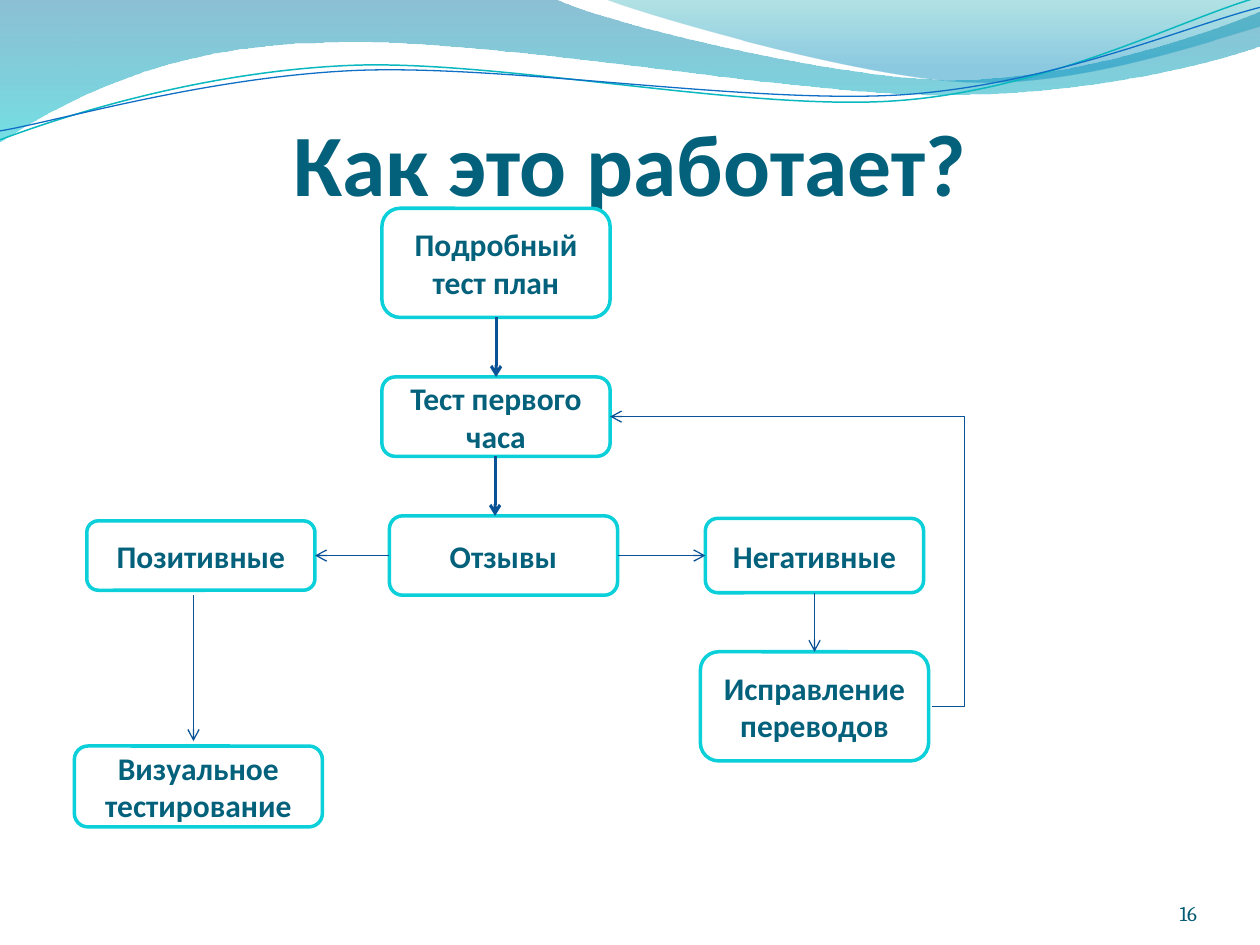
from lxml import etree
from pptx import Presentation
from pptx import util as u
from pptx.dml.color import RGBColor
from pptx.enum import shapes, text
from pptx.oxml.ns import qn

COLORS = {
    "paper": "FFFFFF", "title": "04617B", "number": "045C75",
    "frame": "0BD0D9", "arrow": "095295",
    "teal_line": "0AB8BF", "blue_line": "0F6FC6",
    "wave_top": "0074A1", "wave_bottom": "00C6CF",
    "crest_top": "00A1A9", "crest_bottom": "008BBF",
}

# Outlines in cm: a pair is a straight step, six numbers are a Bezier step.
WAVES = [
    {"start": (0, -0.03), "stops": [("wave_top", 0, 45), ("wave_bottom", 1, 55)],
     "steps": [(11.18, -0.03), (12.09, 0.43, 16.87, 1.6, 19.25, 1.6),
               (21.67, 1.6, 24.33, 0.66, 25.4, 0.23), (25.43, 0.91),
               (24.97, 1.12, 22.1, 1.93, 18.95, 1.91),
               (15.8, 1.91, 9.7, 0.71, 6.53, 0.86),
               (3.28, 0.89, 1.17, 2.11, -0.03, 2.87), (0, -0.03)]},
    {"start": (12.17, -0.03), "stops": [("crest_top", 0, 30), ("crest_bottom", 0.8, 45)],
     "steps": [(12.93, 0.28, 17.32, 1.57, 19.53, 1.65),
               (21.74, 1.75, 24.41, 0.81, 25.4, 0.53), (25.4, 0), (12.17, -0.03)]},
    {"start": (0, 2.82), "line": ("teal_line", 0.85),
     "steps": [(1.22, 2.36, 4.01, 1.45, 7.04, 1.32),
               (10.03, 1.19, 15.06, 2.26, 18.11, 2.03),
               (21.16, 1.8, 23.83, 0.38, 25.35, -0.05)]},
    {"start": (0, 2.64), "line": ("blue_line", 0.75),
     "steps": [(1.19, 2.44, 4.17, 1.55, 7.19, 1.42),
               (10.24, 1.3, 15.16, 2.11, 18.21, 1.91),
               (21.23, 1.7, 23.9, 0.53, 25.4, 0.15)]},
]

# Left, top, width, height in cm from the corner of the chart
STEPS = [
    ("Подробный тест план", 6.2, 0, 4.6, 2.2),
    ("Отзывы", 6.35, 6.2, 4.6, 1.6),
    ("Визуальное тестирование", 0, 10.84, 5, 1.63),
    ("Исправление переводов", 12.62, 8.94, 4.6, 2.2),
    ("Позитивные", 0.25, 6.3, 4.6, 1.4),
    ("Негативные", 12.72, 6.25, 4.4, 1.5),
    ("Тест первого часа", 6.2, 3.4, 4.6, 1.6),
]
# Begin x, y, end x, y in cm, then line width in points
ARROWS = [
    (8.5, 2.2, 8.5, 3.4, 1.75),
    (8.48, 5, 8.48, 6.2, 1.75),
    (6.35, 7, 4.85, 7, 0.75),
    (10.95, 7, 12.72, 7, 0.75),
    (14.92, 7.75, 14.92, 8.94, 0.75),
    (2.4, 7.8, 2.4, 10.74, 0.75),
]
RETURN_ARROW = (17.3, 10.04, 10.8, 4.2, 0.75)


def color(name):
    return RGBColor.from_string(COLORS[name])


def set_line(line, name, width):
    line.color.rgb = color(name)
    line.width = u.Pt(width)


def write(box, words, name, size, font="Calibri", bold=True,
          align=text.PP_ALIGN.CENTER, **frame_format):
    frame = box.text_frame
    for key, value in {"word_wrap": True, **frame_format}.items():
        setattr(frame, key, value)
    para = frame.paragraphs[0]
    para.alignment = align
    span = para.add_run()
    span.text = words
    for key, value in {"name": font, "size": u.Pt(size), "bold": bold}.items():
        setattr(span.font, key, value)
    span.font.color.rgb = color(name)


def fill_gradient(fill, stops):
    fill.gradient()
    fill.gradient_angle = 270
    for stop, (name, position, opacity) in zip(fill.gradient_stops, stops):
        stop.color.rgb = color(name)
        stop.position = position
        tint = stop._gs.find(qn("a:srgbClr"))
        etree.SubElement(tint, qn("a:alpha"), val=str(opacity * 1000))


def bend(shape, steps, left, top):
    """Turn the straight segments of six-number steps into Bezier curves."""
    segments = list(shape._element.spPr.iter(qn("a:lnTo")))
    for segment, step in zip(segments, steps):
        if len(step) == 2:
            continue
        curve = etree.Element(qn("a:cubicBezTo"))
        for x, y in zip(step[::2], step[1::2]):
            etree.SubElement(curve, qn("a:pt"),
                             x=str(u.Cm(left + x) - shape.left),
                             y=str(u.Cm(top + y) - shape.top))
        segment.getparent().replace(segment, curve)


def add_waves(page, left, top):
    for wave in WAVES:
        knots = [(u.Cm(left + point[-2]), u.Cm(top + point[-1]))
                 for point in [wave["start"], *wave["steps"]]]
        builder = page.shapes.build_freeform(*knots[0])
        builder.add_line_segments(knots[1:], close="stops" in wave)
        shape = builder.convert_to_shape()
        bend(shape, wave["steps"], left, top)
        shape.shadow.inherit = False
        if "stops" in wave:
            fill_gradient(shape.fill, wave["stops"])
            shape.line.fill.background()
        else:
            shape.fill.background()
            set_line(shape.line, *wave["line"])


def add_label(page, area, words, name, size, **formats):
    box = page.shapes.add_textbox(*map(u.Cm, area))
    write(box, words, name, size, margin_left=0, margin_right=0, margin_bottom=0,
          vertical_anchor=text.MSO_ANCHOR.BOTTOM, **formats)


def add_arrow(page, left, top, arrow, kind=shapes.MSO_CONNECTOR.STRAIGHT):
    x1, y1, x2, y2, width = arrow
    ends = (left + x1, top + y1, left + x2, top + y2)
    connector = page.shapes.add_connector(kind, *map(u.Cm, ends))
    set_line(connector.line, "arrow", width)
    properties = connector._element.spPr
    etree.SubElement(properties.find(qn("a:ln")), qn("a:tailEnd"), type="arrow")
    etree.SubElement(properties, qn("a:effectLst"))
    return connector


def add_flowchart(page, left, top):
    for words, x, y, width, height in STEPS:
        box = page.shapes.add_shape(
            shapes.MSO_SHAPE.ROUNDED_RECTANGLE,
            *map(u.Cm, (left + x, top + y, width, height)))
        box.shadow.inherit = False
        box.fill.solid()
        box.fill.fore_color.rgb = color("paper")
        set_line(box.line, "frame", 2)
        write(box, words, "title", 18, vertical_anchor=text.MSO_ANCHOR.MIDDLE)
    for arrow in ARROWS:
        add_arrow(page, left, top, arrow)
    bent = add_arrow(page, left, top, RETURN_ARROW, shapes.MSO_CONNECTOR.ELBOW)
    geometry = bent._element.spPr.find(qn("a:prstGeom"))
    guides = geometry.find(qn("a:avLst"))
    if guides is None:
        guides = etree.SubElement(geometry, qn("a:avLst"))
    etree.SubElement(guides, qn("a:gd"), name="adj1", fmla="val -9900")


def main():
    deck = Presentation()
    deck.slide_width, deck.slide_height = u.Cm(25.4), u.Cm(19.05)
    page = deck.slides.add_slide(deck.slide_layouts[6])
    add_waves(page, 0, 0)
    add_label(page, (1.27, 1.96, 22.86, 2.36), "Как это работает?", "title", 50)
    add_label(page, (22.02, 17.65, 2.11, 1.02), "16", "number", 12, font="Cambria",
              bold=False, align=text.PP_ALIGN.RIGHT, margin_top=0)
    add_flowchart(page, 1.5, 4.2)
    deck.save("out.pptx")


if __name__ == "__main__":
    main()
